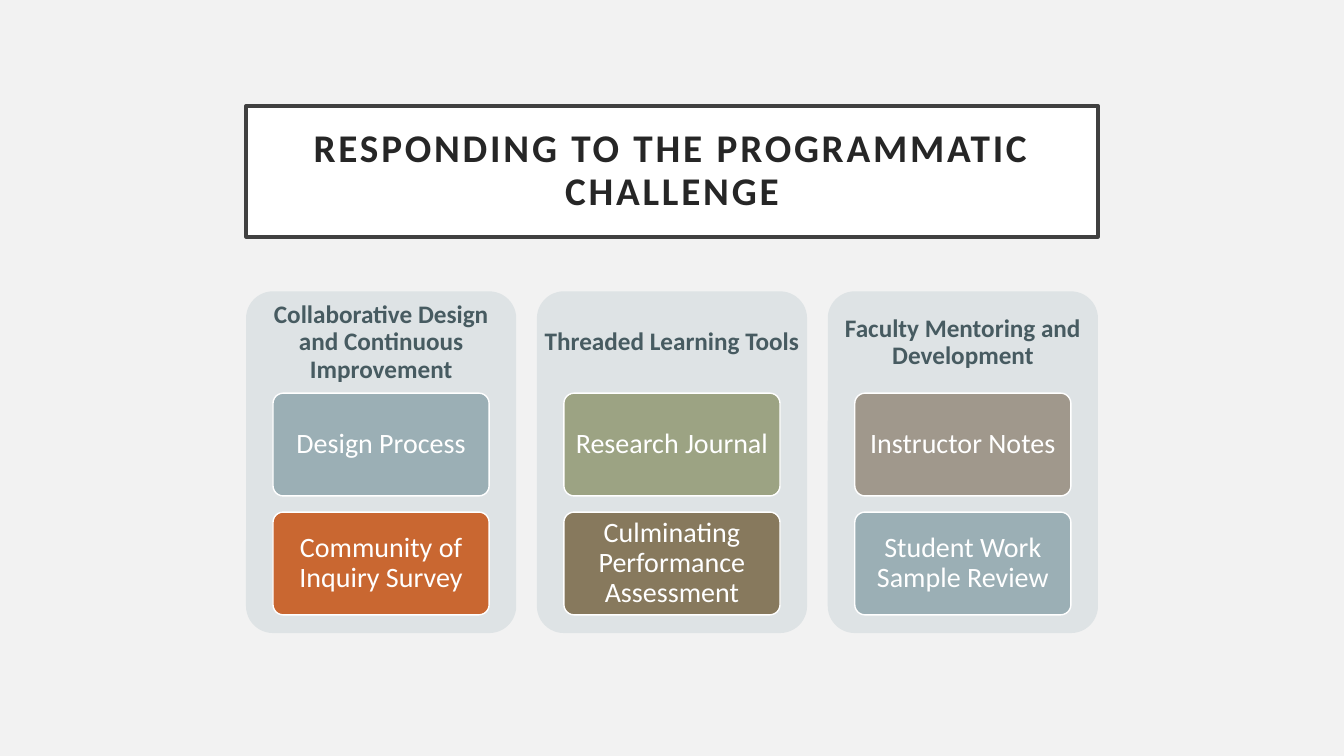
from pptx import Presentation
from pptx.dml.color import RGBColor
from pptx.enum.shapes import MSO_SHAPE
from pptx.enum.text import MSO_ANCHOR, PP_ALIGN
from pptx.util import Inches, Pt

BACKGROUND = RGBColor(0xF2, 0xF2, 0xF2)
WHITE = RGBColor(0xFF, 0xFF, 0xFF)
FRAME = RGBColor(0x40, 0x40, 0x40)
TITLE_INK = RGBColor(0x26, 0x26, 0x26)
PANEL = RGBColor(0xDE, 0xE3, 0xE5)
HEADING_INK = RGBColor(0x47, 0x5B, 0x61)
BLUE_GREY = RGBColor(0x9B, 0xAF, 0xB5)
ORANGE = RGBColor(0xC9, 0x67, 0x31)
SAGE = RGBColor(0x9C, 0xA3, 0x83)
OLIVE = RGBColor(0x87, 0x79, 0x5D)
TAUPE = RGBColor(0xA0, 0x98, 0x8C)

LEFT, CONTENT_WIDTH = 2.44, 8.45
PANEL_TOP, PANEL_WIDTH, PANEL_HEIGHT = 2.89, 2.68, 3.39
COLUMN_STEP = (CONTENT_WIDTH - PANEL_WIDTH) / 2
HEADING_HEIGHT = 0.3 * PANEL_HEIGHT
CARD_INDENT, CARD_WIDTH = 0.1 * PANEL_WIDTH, 0.8 * PANEL_WIDTH
CARD_TOP, CARD_HEIGHT, ROW_STEP = 3.9, 1.02, 1.18

COLUMNS = [
    ("Collaborative Design and Continuous Improvement",
     [("Design Process", BLUE_GREY), ("Community of Inquiry Survey", ORANGE)]),
    ("Threaded Learning Tools",
     [("Research Journal", SAGE), ("Culminating Performance Assessment", OLIVE)]),
    ("Faculty Mentoring and Development",
     [("Instructor Notes", TAUPE), ("Student Work Sample Review", BLUE_GREY)]),
]


def write(shape, text, size, color, bold, side_inset, end_inset):
    frame = shape.text_frame
    frame.word_wrap = True
    frame.vertical_anchor = MSO_ANCHOR.MIDDLE
    frame.margin_left = frame.margin_right = Inches(side_inset)
    frame.margin_top = frame.margin_bottom = Inches(end_inset)
    frame.text = text
    para = frame.paragraphs[0]
    para.alignment = PP_ALIGN.CENTER
    para.line_spacing = 0.9
    para.font.name = "Calibri"
    para.font.size = Pt(size)
    para.font.bold = bold
    para.font.color.rgb = color
    return para


def add_title(page, text):
    title = page.shapes.title
    title.left, title.top = Inches(LEFT), Inches(1.05)
    title.width, title.height = Inches(CONTENT_WIDTH), Inches(1.3)
    title.fill.solid()
    title.fill.fore_color.rgb = WHITE
    title.line.color.rgb = FRAME
    title.line.width = Pt(2.5)
    para = write(title, text, 28, TITLE_INK, True, 0.2, 0.2)
    para.runs[0].font._element.set("spc", "200")


def add_rounded(page, left, top, width, height, color):
    box = page.shapes.add_shape(MSO_SHAPE.ROUNDED_RECTANGLE, Inches(left),
                                Inches(top), Inches(width), Inches(height))
    box.adjustments[0] = 0.1
    box.shadow.inherit = False
    box.fill.solid()
    box.fill.fore_color.rgb = color
    box.line.fill.background()
    return box


def add_card(page, left, top, text, color):
    card = add_rounded(page, left, top, CARD_WIDTH, CARD_HEIGHT, color)
    card.line.color.rgb = WHITE
    card.line.width = Pt(1)
    write(card, text, 20, WHITE, False, 0.06, 0.04)


def add_column(page, left, heading, cards):
    add_rounded(page, left, PANEL_TOP, PANEL_WIDTH, PANEL_HEIGHT, PANEL)
    label = page.shapes.add_textbox(Inches(left), Inches(PANEL_TOP),
                                    Inches(PANEL_WIDTH), Inches(HEADING_HEIGHT))
    write(label, heading, 18, HEADING_INK, True, 0.07, 0.07)
    for row, (text, color) in enumerate(cards):
        add_card(page, left + CARD_INDENT, CARD_TOP + row * ROW_STEP, text, color)


def main():
    deck = Presentation()
    deck.slide_width, deck.slide_height = Inches(13.33), Inches(7.5)
    page = deck.slides.add_slide(deck.slide_layouts[5])
    page.background.fill.solid()
    page.background.fill.fore_color.rgb = BACKGROUND
    add_title(page, "RESPONDING TO THE PROGRAMMATIC CHALLENGE")
    for column, (heading, cards) in enumerate(COLUMNS):
        add_column(page, LEFT + column * COLUMN_STEP, heading, cards)
    deck.save("out.pptx")


if __name__ == "__main__":
    main()
